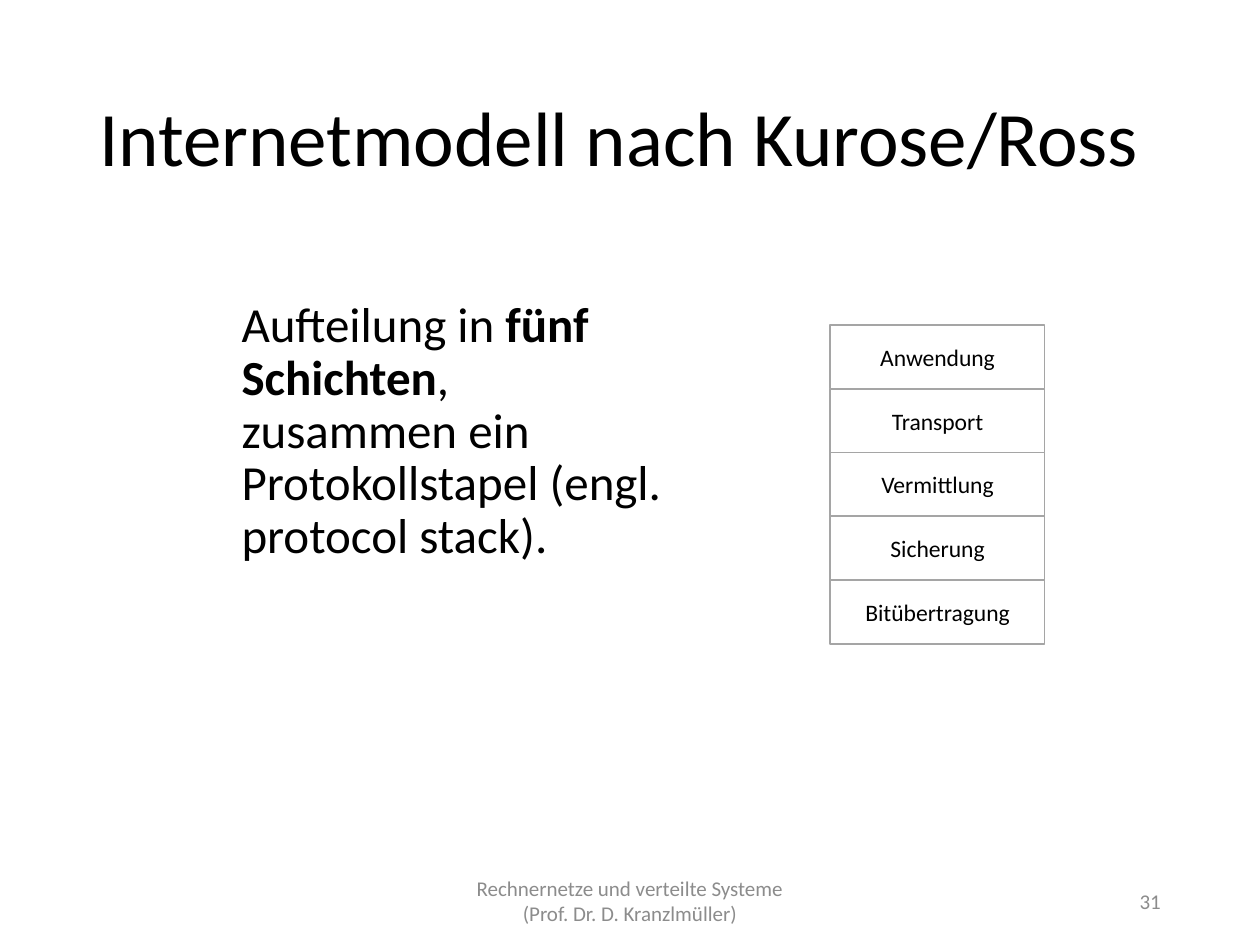
from pptx import Presentation
from pptx.dml.color import RGBColor
from pptx.enum.shapes import MSO_SHAPE
from pptx.enum.text import MSO_ANCHOR as Anchor, PP_ALIGN as Align
from pptx.util import Cm, Pt

COLORS = {"text": "000000", "muted": "8C8C8C", "box": "FFFFFF", "border": "A5A5A5"}
FONT = "Calibri"
LAYERS = ["Anwendung", "Transport", "Vermittlung", "Sicherung", "Bitübertragung"]


def color(name):
    return RGBColor.from_string(COLORS[name])


def write(frame, runs, size, tone="text", align=Align.LEFT, anchor=Anchor.MIDDLE,
          spacing=None):
    """Fill the frame with one paragraph of (text, bold) runs; None is a line break."""
    frame.word_wrap = True
    frame.vertical_anchor = anchor
    paragraph = frame.paragraphs[0]
    paragraph.alignment = align
    paragraph.line_spacing = spacing
    for part in runs:
        if part is None:
            paragraph.add_line_break()
            continue
        run = paragraph.add_run()
        run.text, run.font.bold = part
        run.font.name = FONT
        run.font.size = Pt(size)
        run.font.color.rgb = color(tone)


def add_text(slide, box, runs, size, **style):
    frame = slide.shapes.add_textbox(*map(Cm, box)).text_frame
    write(frame, runs, size, **style)


def add_title(slide, box):
    add_text(slide, box, [("Internetmodell nach Kurose/Ross", False)], 44, spacing=0.9)


def add_explanation(slide, box):
    runs = [
        ("Aufteilung in ", False),
        ("fünf Schichten", True),
        (",", False),
        None,
        ("zusammen ein Protokollstapel (engl. protocol stack).", False),
    ]
    add_text(slide, box, runs, 28, anchor=Anchor.TOP, spacing=0.9)


def add_layer_stack(slide, box):
    """Stack the protocol layers as equal rows that fill the box."""
    left, top, width, height = box
    row_height = height / len(LAYERS)
    stack = slide.shapes.add_group_shape()
    for row, name in enumerate(LAYERS):
        layer = stack.shapes.add_shape(
            MSO_SHAPE.RECTANGLE, Cm(left), Cm(top + row * row_height),
            Cm(width), Cm(row_height))
        layer.shadow.inherit = False
        layer.fill.solid()
        layer.fill.fore_color.rgb = color("box")
        layer.line.color.rgb = color("border")
        layer.line.width = Pt(1)
        write(layer.text_frame, [(name, False)], 13.5, align=Align.CENTER)


def add_footer(slide, box):
    """Place the course in the middle and the page number at the right edge."""
    left, top, width, height = box
    course_width, number_width = 8.59, 5.72
    course = [("Rechnernetze und verteilte Systeme", False), None,
              ("(Prof. Dr. D. Kranzlmüller)", False)]
    add_text(slide, (left + (width - course_width) / 2, top, course_width, height),
             course, 12, tone="muted", align=Align.CENTER)
    add_text(slide, (left + width - number_width, top, number_width, height),
             [("31", False)], 12, tone="muted", align=Align.RIGHT)


def main():
    deck = Presentation()
    deck.slide_width, deck.slide_height = Cm(25.4), Cm(19.05)
    slide = deck.slides.add_slide(deck.slide_layouts[6])
    add_title(slide, (1.75, 1.02, 21.9, 3.68))
    add_explanation(slide, (4.62, 5.92, 11.89, 9.07))
    add_footer(slide, (1.75, 17.65, 21.9, 1.02))
    add_layer_stack(slide, (16.74, 6.55, 4.32, 6.43))
    deck.save("out.pptx")


if __name__ == "__main__":
    main()
